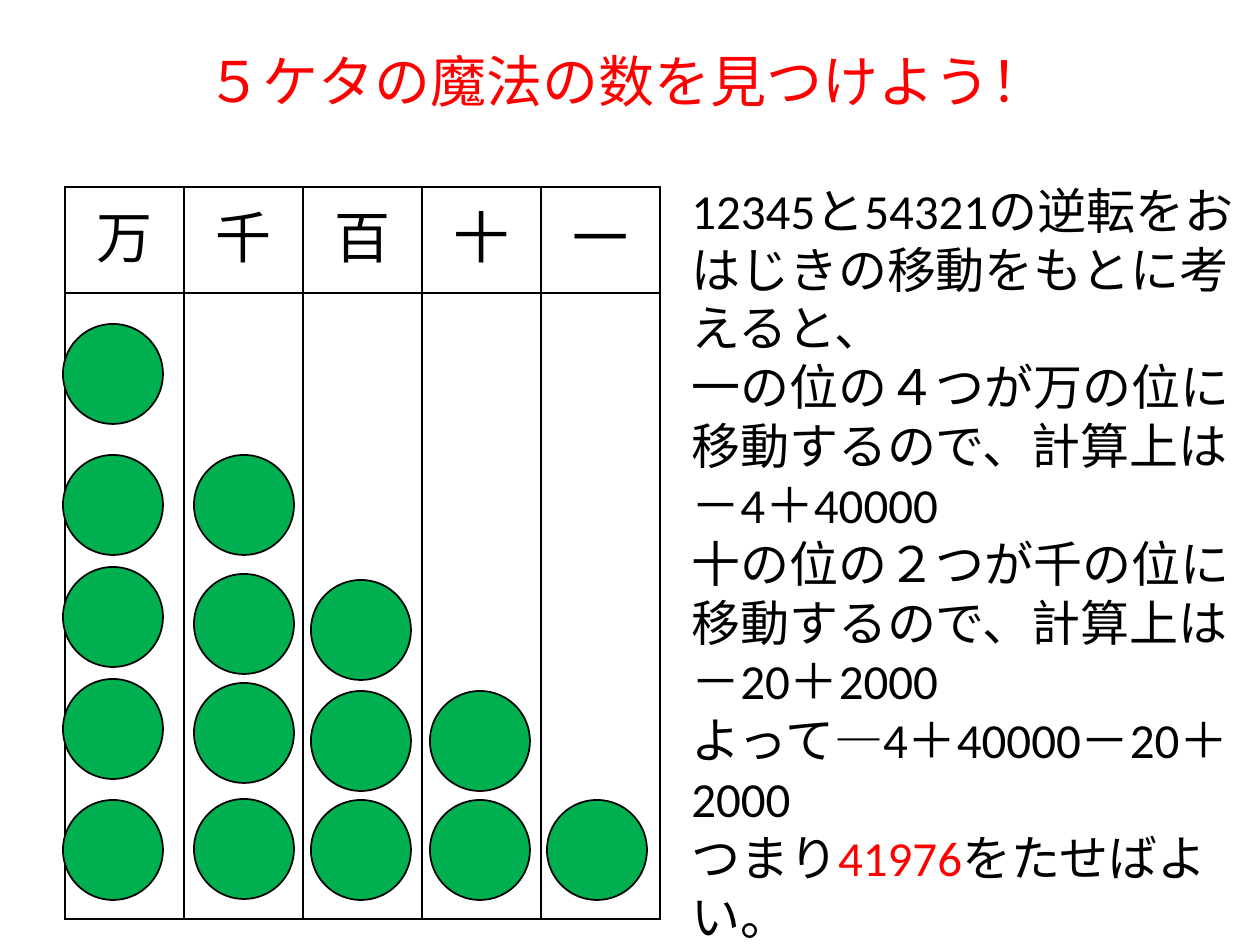
from typing import NamedTuple

from lxml.etree import SubElement
from pptx import Presentation
from pptx.dml.color import RGBColor
from pptx.enum.shapes import MSO_SHAPE as Shape
from pptx.enum.text import MSO_ANCHOR as Anchor, MSO_AUTO_SIZE as AutoSize, PP_ALIGN as Align
from pptx.oxml.ns import qn
from pptx.util import Emu, Pt

COLORS = {"ink": "000000", "accent": "FF0000", "counter": "00B050"}
FONT = "Calibri"
COUNTER_SIZE = 100


class Frame(NamedTuple):
    left: int
    top: int
    width: int
    height: int


class Span(NamedTuple):
    text: str
    color: str = "ink"


class CounterColumn(NamedTuple):
    digit: str
    left: int
    tops: tuple[int, ...]


TABLE_FRAME = Frame(65, 187, 595, 732)
HEADER_HEIGHT = 106
COLUMNS = [
    CounterColumn("万", 63, (324, 455, 567, 679, 800)),
    CounterColumn("千", 194, (455, 574, 683, 799)),
    CounterColumn("百", 311, (580, 691, 800)),
    CounterColumn("十", 430, (691, 800)),
    CounterColumn("一", 547, (800,)),
]
EXPLANATION = [
    [Span("12345と54321の逆転をおはじきの移動をもとに考えると、")],
    [Span("一の位の４つが万の位に移動するので、計算上は")],
    [Span("－4＋40000")],
    [Span("十の位の２つが千の位に移動するので、計算上は")],
    [Span("－20＋2000")],
    [Span("よって―4＋40000－20＋2000")],
    [Span("つまり"), Span("41976", "accent"), Span("をたせばよい。")],
]


def px(length: int) -> Emu:
    return Emu(round(length * 914400 / 126))


def rgb(name: str) -> RGBColor:
    return RGBColor.from_string(COLORS[name])


def write(text_frame, paragraphs: list[list[Span]], *, size: int, align=Align.LEFT) -> None:
    for index, spans in enumerate(paragraphs):
        para = text_frame.add_paragraph() if index else text_frame.paragraphs[0]
        para.alignment = align
        for span in spans:
            run = para.add_run()
            run.text = span.text
            run.font.name = FONT
            run.font.size = Pt(size)
            run.font.color.rgb = rgb(span.color)


def add_text(page, frame: Frame, paragraphs: list[list[Span]], *, size: int,
             align=Align.LEFT, anchor=Anchor.TOP, fit=AutoSize.NONE) -> None:
    box = page.shapes.add_textbox(*map(px, frame))
    box.text_frame.word_wrap = True
    box.text_frame.auto_size = fit
    box.text_frame.vertical_anchor = anchor
    write(box.text_frame, paragraphs, size=size, align=align)


def outline_cell(cell) -> None:
    properties = cell._tc.get_or_add_tcPr()
    for index, side in enumerate(("lnL", "lnR", "lnT", "lnB")):
        line = SubElement(properties, qn(f"a:{side}"), w=str(Pt(1)))
        fill = SubElement(line, qn("a:solidFill"))
        SubElement(fill, qn("a:srgbClr"), val=COLORS["ink"])
        properties.insert(index, line)


def add_place_table(page) -> None:
    table = page.shapes.add_table(2, len(COLUMNS), *map(px, TABLE_FRAME)).table
    table.first_row = table.horz_banding = False
    table.rows[0].height = px(HEADER_HEIGHT)
    table.rows[1].height = px(TABLE_FRAME.height - HEADER_HEIGHT)
    for cell in table.iter_cells():
        cell.fill.background()
        outline_cell(cell)
    for index, column in enumerate(COLUMNS):
        write(table.cell(0, index).text_frame, [[Span(column.digit)]],
              size=32, align=Align.CENTER)


def add_counter(page, left: int, top: int) -> None:
    frame = Frame(left, top, COUNTER_SIZE, COUNTER_SIZE)
    counter = page.shapes.add_shape(Shape.FLOWCHART_CONNECTOR, *map(px, frame))
    counter.shadow.inherit = False
    counter.fill.solid()
    counter.fill.fore_color.rgb = rgb("counter")
    counter.line.color.rgb = rgb("ink")
    counter.line.width = Pt(1)


def main() -> None:
    deck = Presentation()
    deck.slide_width, deck.slide_height = px(1260), px(945)
    page = deck.slides.add_slide(deck.slide_layouts[6])
    add_text(page, Frame(60, 16, 1134, 129), [[Span("５ケタの魔法の数を見つけよう！", "accent")]],
             size=32, align=Align.CENTER, anchor=Anchor.MIDDLE)
    add_place_table(page)
    for column in COLUMNS:
        for top in column.tops:
            add_counter(page, column.left, top)
    add_text(page, Frame(679, 174, 581, 726), EXPLANATION, size=28,
             fit=AutoSize.SHAPE_TO_FIT_TEXT)
    deck.save("out.pptx")


if __name__ == "__main__":
    main()
